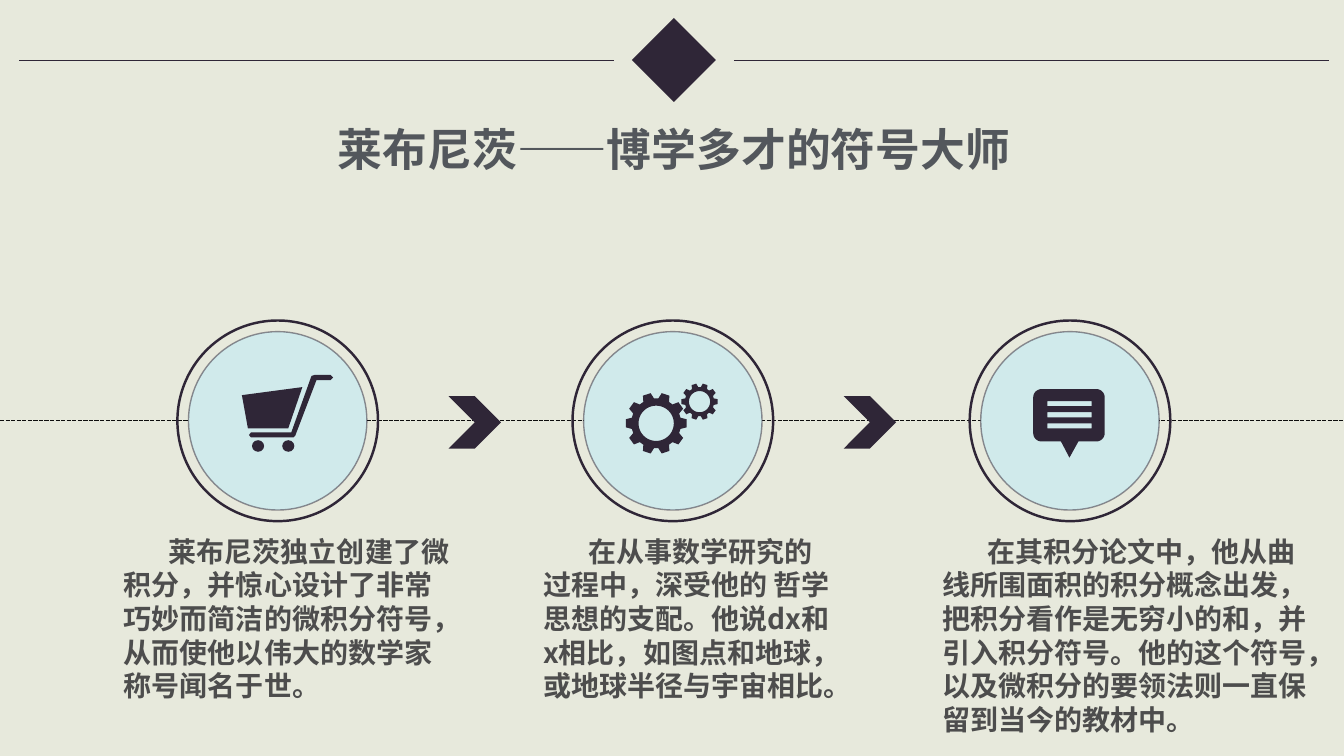
import math

import lxml.etree
import pptx
import pptx.dml.color
import pptx.enum.dml
import pptx.enum.lang
import pptx.enum.shapes
import pptx.enum.text
import pptx.oxml.ns
import pptx.util

SHAPE = pptx.enum.shapes.MSO_SHAPE
ALIGN = pptx.enum.text.PP_ALIGN
COLUMNS, ROWS = 160, 90
CELL = pptx.util.Inches(1) / 12
MIDDLE = 80.22
AXIS = 50.1


def cells(count):
    return pptx.util.Emu(round(count * CELL))


def color(hex_string):
    return pptx.dml.color.RGBColor.from_string(hex_string)


def add_xml(parent, tag, **attributes):
    return lxml.etree.SubElement(parent, pptx.oxml.ns.qn(tag), attributes)


def arc(x, y, radius, start=0, end=360, steps=48):
    angles = [math.radians(start + (end - start) * i / steps) for i in range(steps + 1)]
    return [(x + radius * math.cos(a), y + radius * math.sin(a)) for a in angles]


def rectangle(x, y, width, height):
    left, right = x - width / 2, x + width / 2
    top, bottom = y - height / 2, y + height / 2
    return [(left, top), (left, bottom), (right, bottom), (right, top)]


def rounded_rectangle(x, y, width, height, radius):
    corners = rectangle(x, y, width - 2 * radius, height - 2 * radius)
    turns = zip(corners, (270, 180, 90, 0))
    return [point for corner, end in turns
            for point in arc(*corner, radius, end, end - 90, 8)]


def gear(x, y, tip, root, hole, teeth=10):
    outline = []
    for tooth in range(teeth):
        for offset, radius in ((-13, root), (-7.6, tip), (7.6, tip), (13, root)):
            angle = math.radians(tooth * 360 / teeth + offset)
            outline.append((x + radius * math.cos(angle), y + radius * math.sin(angle)))
    return [outline, arc(x, y, hole, 360, 0)]


class Sketch:
    ink, paper, disk, axis, text = "2F2637", "E7E9DC", "D0EAEB", "0D0D0D", "4D4D4D"
    title_stops = (("53575C", 0.21), ("C5C7CA", 0.88))
    title_font, body_font = "Noto Sans CJK SC", "Noto Sans CJK JP"

    def __init__(self, page):
        self.page = page
        self.shapes = page.shapes
        page.background.fill.solid()
        page.background.fill.fore_color.rgb = color(self.paper)

    def start_group(self):
        self.shapes = self.page.shapes.add_group_shape().shapes

    def end_group(self):
        self.shapes = self.page.shapes

    def paint(self, shape, fill, line=None, weight=1):
        shape.shadow.inherit = False
        if fill:
            shape.fill.solid()
            shape.fill.fore_color.rgb = color(fill)
        else:
            shape.fill.background()
        if line:
            shape.line.color.rgb = color(line)
            shape.line.width = pptx.util.Pt(weight)
        else:
            shape.line.fill.background()
        return shape

    def centred(self, kind, x, y, width, height, fill, line=None, weight=1):
        shape = self.shapes.add_shape(kind, cells(x - width / 2), cells(y - height / 2),
                                      cells(width), cells(height))
        return self.paint(shape, fill, line, weight)

    def line(self, start, end, y, hue, weight, dash=None):
        connector = self.shapes.add_connector(
            pptx.enum.shapes.MSO_CONNECTOR.STRAIGHT, cells(start), cells(y), cells(end), cells(y))
        connector.line.color.rgb = color(hue)
        connector.line.width = pptx.util.Pt(weight)
        if dash:
            connector.line.dash_style = dash
        add_xml(connector._element.spPr, "a:effectLst")

    def outline(self, x, y, *contours):
        builder = None
        for contour in contours:
            points = [(cells(x + dx), cells(y + dy)) for dx, dy in contour]
            if builder is None:
                builder = self.shapes.build_freeform(*points[0])
            else:
                builder.move_to(*points[0])
            builder.add_line_segments(points[1:], close=True)
        self.paint(builder.convert_to_shape(), self.ink)

    def label(self, words, left, top, width, height, font, size, align, wrap=True, indent=0):
        box = self.shapes.add_textbox(cells(left), cells(top), cells(width), cells(height))
        box.text_frame.word_wrap = wrap
        box.text_frame.auto_size = pptx.enum.text.MSO_AUTO_SIZE.SHAPE_TO_FIT_TEXT
        para = box.text_frame.paragraphs[0]
        para.alignment = align
        if indent:
            para._p.get_or_add_pPr().set("indent", str(cells(indent)))
        span = para.add_run()
        span.text = words
        span.font.size = pptx.util.Pt(size)
        span.font.bold = True
        span.font.language_id = pptx.enum.lang.MSO_LANGUAGE_ID.SIMPLIFIED_CHINESE
        span.font.fill.solid()
        span.font.fill.fore_color.rgb = color(self.text)
        span.font.name = font
        add_xml(span._r.get_or_add_rPr(), "a:ea", typeface=font)
        return span

    def title(self, words):
        span = self.label(words, 38.64, 13.92, 83.28, 7.68, self.title_font, 32,
                          ALIGN.CENTER, wrap=False)
        span.font.fill.gradient()
        span.font.fill.gradient_angle = 270
        for stop, (hue, position) in zip(span.font.fill.gradient_stops, self.title_stops):
            stop.color.rgb = color(hue)
            stop.position = position

    def body(self, words, left, width, height):
        self.label(words, left, 63, width, height, self.body_font, 20, ALIGN.LEFT, indent=5.35)

    def medallion(self, x):
        self.centred(SHAPE.OVAL, x, AXIS, 23.88, 23.88, None, self.ink, 1.75)
        disk = self.centred(SHAPE.OVAL, x, AXIS, 21.24, 21.24, self.disk, self.ink)
        hue = disk.line._ln.find(".//" + pptx.oxml.ns.qn("a:srgbClr"))
        add_xml(hue, "a:alpha", val="50000")

    def cart(self, x):
        self.outline(x, AXIS, [(2.94, -4.02), (-4.26, -3.06), (-3.54, 0.9), (1.26, 0.9)])
        self.outline(x, AXIS, [
            (6.3, -5.46), (4.38, -5.46), (4.02, -5.34), (1.62, 1.38), (-3.18, 1.38),
            (-3.42, 1.68), (-3.18, 1.98), (1.86, 1.98), (2.1, 1.74), (4.62, -4.86),
            (6.3, -4.86), (6.6, -5.16)])
        for offset in (-2.34, 1.26):
            self.centred(SHAPE.OVAL, x + offset, AXIS + 3, 1.44, 1.38, self.ink)

    def gears(self, x):
        self.outline(x, AXIS, *gear(-1.98, 0.3, 3.65, 2.97, 2.1))
        self.outline(x, AXIS, *gear(3.18, -2.28, 2.18, 1.74, 1.26))

    def bubble(self, x):
        bars = [rectangle(-0.06, -2.04 + 1.32 * i, 5.28, 0.6)[::-1] for i in range(3)]
        self.outline(x, AXIS, [(-1.26, 2.1), (1.2, 2.1), (-0.06, 4.38)])
        self.outline(x, AXIS, rounded_rectangle(-0.12, -0.66, 8.52, 6.24, 1), *bars)


def main():
    deck = pptx.Presentation()
    deck.slide_width, deck.slide_height = cells(COLUMNS), cells(ROWS)
    sketch = Sketch(deck.slides.add_slide(deck.slide_layouts[6]))

    sketch.centred(SHAPE.RECTANGLE, MIDDLE, 7.14, 7.08, 7.08, sketch.ink).rotation = 45
    for start in (2.28, 87.36):
        sketch.line(start, start + 70.8, 7.2, sketch.ink, 0.5)
    sketch.title("莱布尼茨——博学多才的符号大师")

    sketch.line(0, COLUMNS, 50.04, sketch.axis, 1, pptx.enum.dml.MSO_LINE.SQUARE_DOT)
    for x in (56.52, 103.56):
        sketch.centred(SHAPE.CHEVRON, x, 50.28, 6.24, 6.24, sketch.ink)

    stages = (
        (33.06, sketch.cart, 13.56, 42.24, 21.36,
         "莱布尼茨独立创建了微积分，并惊心设计了非常巧妙而简洁的微积分符号，"
         "从而使他以伟大的数学家称号闻名于世。"),
        (80.1, sketch.gears, 63.48, 37.08, 21.36,
         "在从事数学研究的过程中，深受他的 哲学思想的支配。他说dx和x相比，"
         "如图点和地球，或地球半径与宇宙相比。"),
        (127.38, sketch.bubble, 111, 46.2, 25.44,
         "在其积分论文中，他从曲线所围面积的积分概念出发，把积分看作是无穷小的和，"
         "并引入积分符号。他的这个符号，以及微积分的要领法则一直保留到当今的教材中。"),
    )
    for x, icon, left, width, height, words in stages:
        sketch.start_group()
        sketch.medallion(x)
        icon(x)
        sketch.end_group()
        sketch.body(words, left, width, height)

    deck.save("out.pptx")


if __name__ == "__main__":
    main()
